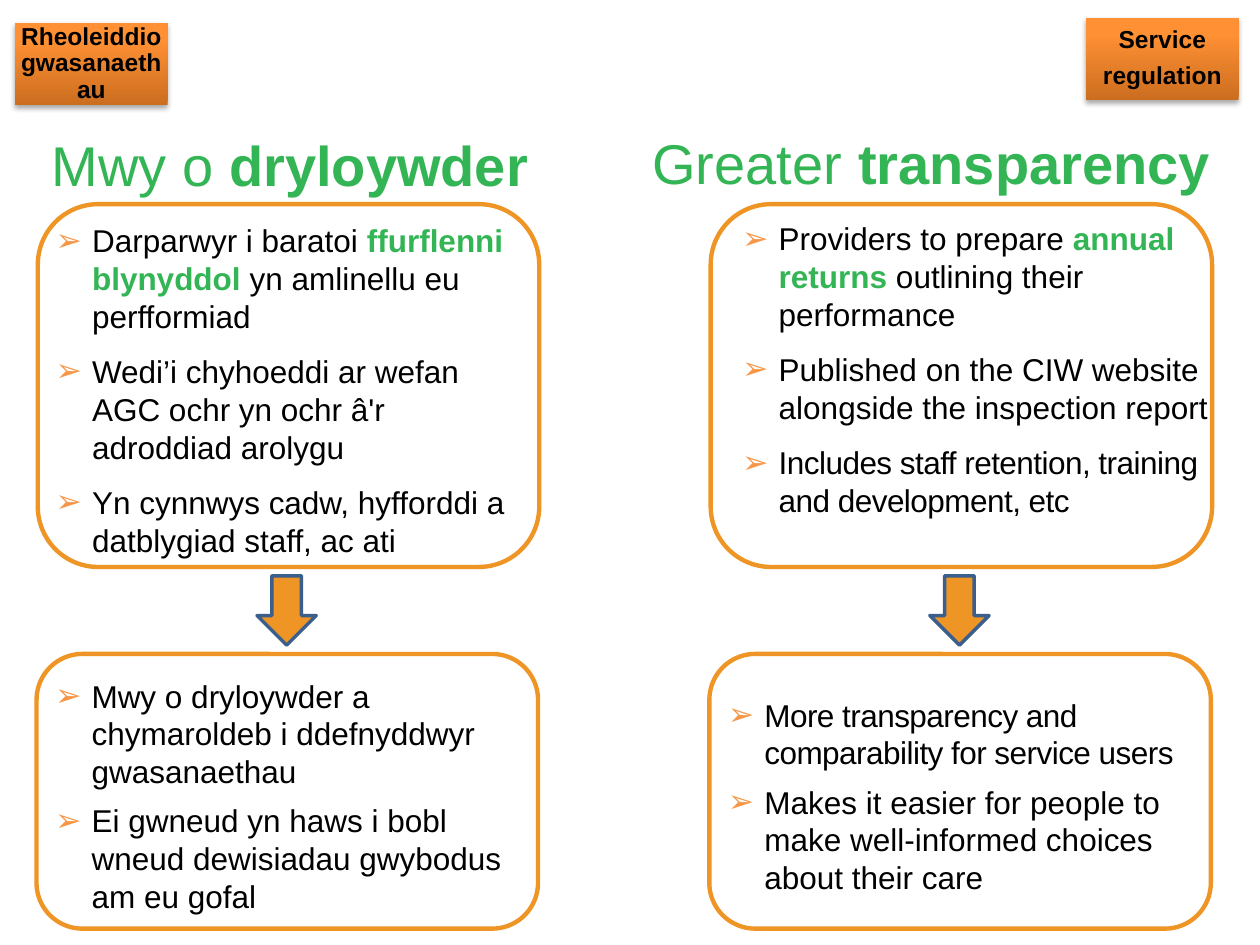
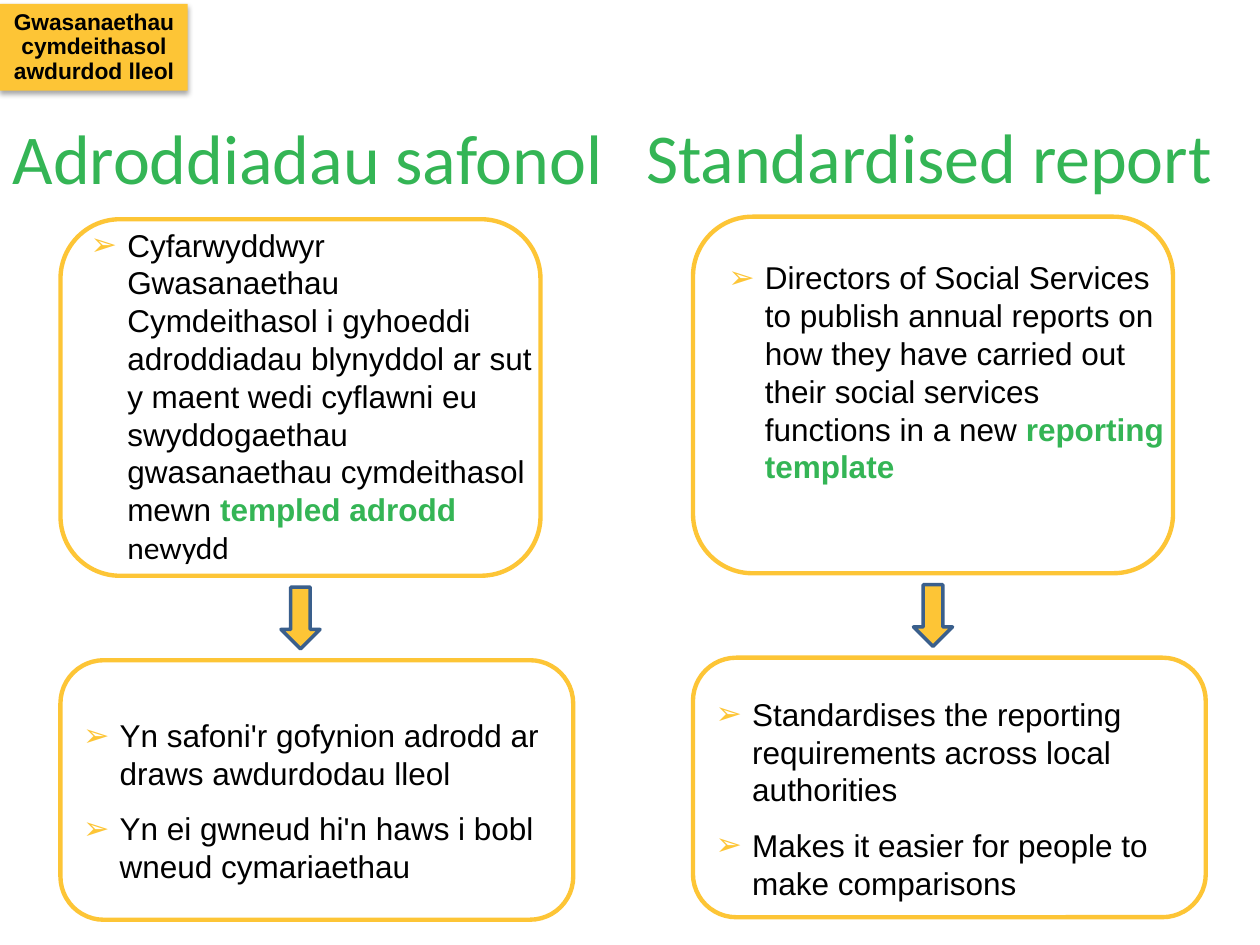
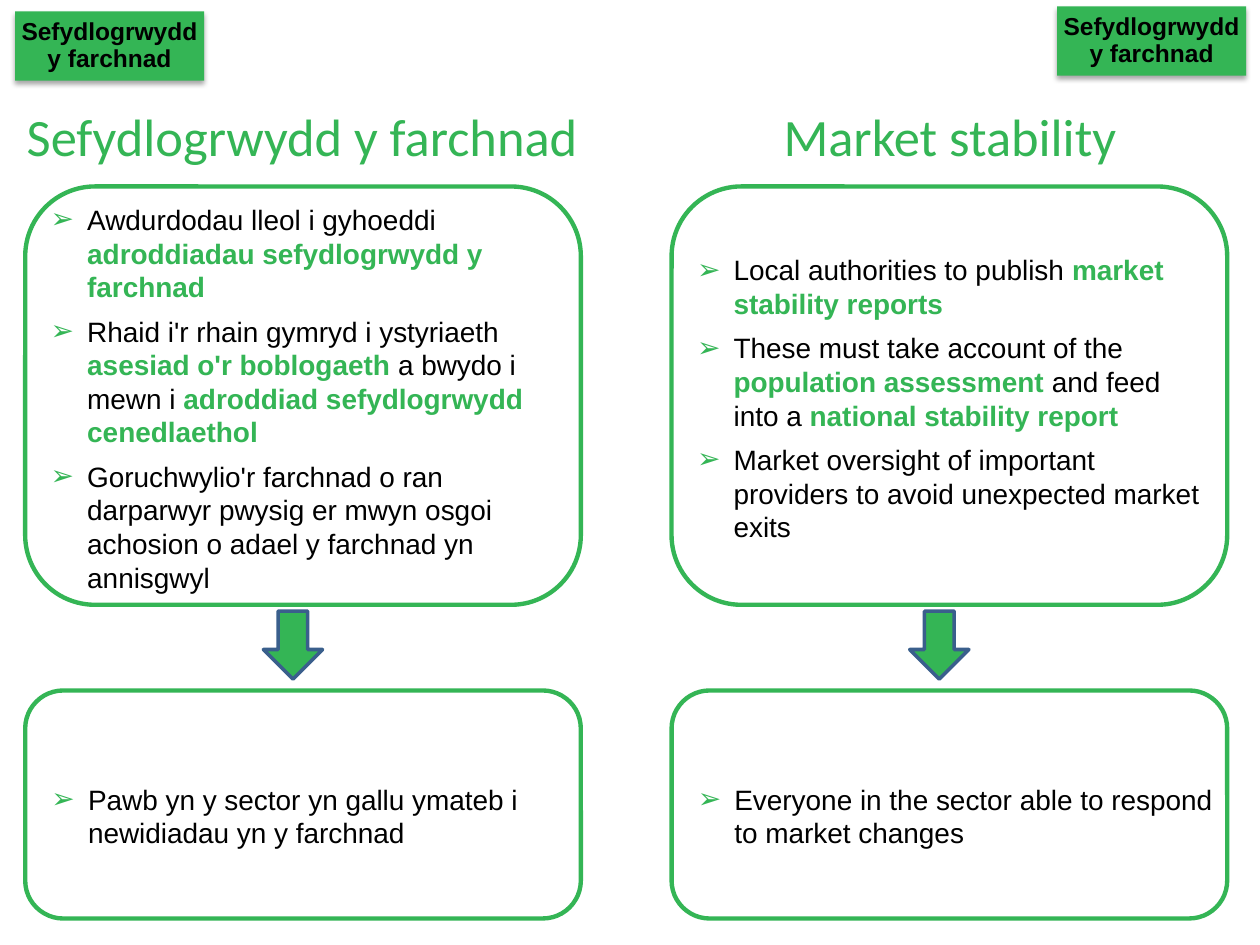
import pptx
import pptx.util
import pptx.dml.color
import pptx.enum.shapes
import pptx.enum.text
import pptx.oxml
import pptx.oxml.ns

Inches = pptx.util.Inches
Pt = pptx.util.Pt
SHAPE = pptx.enum.shapes.MSO_SHAPE
ALIGN = pptx.enum.text.PP_ALIGN
ANCHOR = pptx.enum.text.MSO_ANCHOR

COLOURS = {
    "black": "000000", "green": "34B555", "orange": "EF9526", "bullet orange": "F79646",
    "yellow": "FDC536", "arrow edge": "3A5F8C", "tag dark": "CC6E20", "tag light": "FF9034",
}
RUN_STYLES = {
    "plain": ({"name": "Arial", "bold": False}, "black"),
    "tight": ({"name": "Arial", "bold": False}, "black"),
    "calibri": ({"name": "Calibri", "bold": False}, "black"),
    "strong": ({"name": "Arial", "bold": True}, "black"),
    "key": ({"name": "Arial", "bold": True}, "green"),
    "heading": ({"name": "Arial", "bold": False}, "green"),
    "calibri heading": ({"name": "Calibri", "bold": False}, "green"),
}
BULLET_INDENT = Inches(0.29)
TAG_SHADOW = (
    '<a:outerShdw %s blurRad="39370" dist="22860" dir="5400000" rotWithShape="0">'
    '<a:srgbClr val="000000"><a:alpha val="35000"/></a:srgbClr></a:outerShdw>'
    % pptx.oxml.ns.nsdecls("a"))

# Each paragraph is a list of (text, run style); boxes and arrows are given for the
# left column and moved by "shift" for the right one.
SLIDES = [
    {
        "accent": "orange", "bullet": "bullet orange", "size": 18, "shift": (5.34, 0),
        "titles": [((0.31, 0.53, 6.14, 1.09), [("Mwy o ", "heading"), ("dryloywder", "key")]),
                   ((5.08, 0.51, 6.14, 1.09), [("Greater ", "heading"), ("transparency", "key")])],
        "title format": (32, ANCHOR.BOTTOM, ALIGN.LEFT),
        "tags": [((0.12, 0.18, 1.21, 0.65), ["Rheoleiddio gwasanaethau"]),
                 ((8.62, 0.14, 1.21, 0.65), ["Service", "regulation"])],
        "tag format": (14, 5, 0.02),
        "arrow": (2.04, 4.57, 0.47, 0.55),
        "boxes": [
            {"at": (0.3, 1.62, 3.98, 2.88), "insets": (0, 0.07, 0.04, 0), "gap": 10,
             "list places": (None, (5.79, 1.69, 3.95, 3.8)),
             "lists": (
                 [[("Darparwyr i baratoi ", "plain"), ("ffurflenni blynyddol ", "key"),
                   ("yn amlinellu eu perfformiad", "plain")],
                  [("Wedi’i chyhoeddi ar wefan AGC ochr yn ochr â'r adroddiad arolygu", "plain")],
                  [("Yn cynnwys cadw, hyfforddi a datblygiad staff, ac ati", "plain")]],
                 [[("Providers to prepare ", "plain"), ("annual returns ", "key"),
                   ("outlining their performance", "plain")],
                  [("Published on the CIW website alongside the inspection report", "plain")],
                  [("Includes staff retention, training and development, etc", "tight")]])},
            {"at": (0.29, 5.19, 3.98, 2.18), "insets": (0.04, 0.12, 0.1, 0.05), "gap": 6.5,
             "list places": (None, None),
             "lists": (
                 [[("Mwy o dryloywder a chymaroldeb i ddefnyddwyr gwasanaethau", "plain")],
                  [("Ei gwneud yn haws i bobl wneud dewisiadau gwybodus am eu gofal", "plain")]],
                 [[("More transparency and comparability for service users", "tight")],
                  [("Makes it easier for people to make well-informed choices about their care",
                    "plain")]])},
        ],
    },
    {
        "accent": "yellow", "bullet": "yellow", "size": 18, "shift": (5.02, -0.02),
        "titles": [((0, 0.62, 5.37, 1.25), [("Adroddiadau safonol", "calibri heading")]),
                   ((5.03, 0.61, 5.37, 1.25), [("Standardised report", "calibri heading")])],
        "title format": (40, ANCHOR.MIDDLE, ALIGN.LEFT),
        "tags": [((0, 0.03, 1.49, 0.69), ["Gwasanaethau", "cymdeithasol", "awdurdod lleol"])],
        "tag format": (13, 0, 0.05),
        "arrow": (2.23, 4.66, 0.31, 0.49),
        "boxes": [
            {"at": (0.48, 1.74, 3.81, 2.83), "insets": (0, 0, 0, 0), "gap": 10,
             "list places": ((0.62, 1.74, 3.73, 2.83), (5.68, 2, 3.73, 1.92)),
             "lists": (
                 [[("Cyfarwyddwyr Gwasanaethau Cymdeithasol i gyhoeddi adroddiadau blynyddol ar "
                    "sut y maent wedi cyflawni eu swyddogaethau gwasanaethau cymdeithasol mewn ",
                    "plain"), ("templed adrodd", "key"), (" newydd", "calibri")]],
                 [[("Directors of Social Services to publish annual reports on how they have "
                    "carried out their social services functions in a new ", "plain"),
                   ("reporting template", "key")]])},
            {"at": (0.48, 5.24, 4.07, 2.06), "insets": (0.08, 0.17, 0.08, 0), "gap": 10,
             "list places": (None, None),
             "lists": (
                 [[("Yn safoni'r gofynion adrodd ar draws awdurdodau lleol", "plain")],
                  [("Yn ei gwneud hi'n haws i bobl wneud cymariaethau", "plain")]],
                 [[("Standardises the reporting requirements across local authorities", "plain")],
                  [("Makes it easier for people to make comparisons", "plain")]])},
        ],
    },
    {
        "accent": "green", "bullet": "green", "size": 16, "shift": (5.13, 0),
        "titles": [((-0.83, 0.53, 6.46, 1.09), [("Sefydlogrwydd y farchnad", "calibri heading")]),
                   ((4.31, 0.53, 6.46, 1.09), [("Market stability", "calibri heading")])],
        "title format": (30, ANCHOR.MIDDLE, ALIGN.CENTER),
        "tags": [((0.12, 0.09, 1.5, 0.55), ["Sefydlogrwydd y farchnad"]),
                 ((8.39, 0.05, 1.5, 0.55), ["Sefydlogrwydd y farchnad"])],
        "tag format": (14, 0, 0.02),
        "arrow": (2.09, 4.85, 0.47, 0.54),
        "boxes": [
            {"at": (0.2, 1.48, 4.41, 3.32), "insets": (0.04, 0.12, 0, 0.08), "gap": 6.2,
             "list places": (None, None),
             "lists": (
                 [[("Awdurdodau lleol i gyhoeddi ", "plain"),
                   ("adroddiadau sefydlogrwydd y farchnad", "key")],
                  [("Rhaid i'r rhain gymryd i ystyriaeth ", "plain"),
                   ("asesiad o'r boblogaeth ", "key"), ("a bwydo i mewn i ", "plain"),
                   ("adroddiad sefydlogrwydd cenedlaethol", "key")],
                  [("Goruchwylio'r farchnad o ran darparwyr pwysig er mwyn osgoi achosion o "
                    "adael y farchnad yn annisgwyl", "plain")]],
                 [[("Local authorities to publish ", "plain"), ("market stability reports", "key")],
                  [("These must take account of the ", "plain"), ("population assessment ", "key"),
                   ("and feed into a ", "plain"), ("national stability report", "key")],
                  [("Market oversight of important providers to avoid unexpected market exits",
                    "plain")]])},
            {"at": (0.2, 5.48, 4.41, 1.81), "insets": (0.12, 0.18, 0, 0), "gap": 6.2,
             "list places": (None, None),
             "lists": (
                 [[("Pawb yn y sector yn gallu ymateb i newidiadau yn y farchnad", "plain")]],
                 [[("Everyone in the sector able to respond to market changes", "plain")]])},
        ],
    },
]


def write_text(frame, paragraphs, size, insets, anchor, align, gap=0, line=1.0, bullet=None):
    """Fill a text frame; gap is the space between paragraphs in points."""
    left, top, right, bottom = map(Inches, insets)
    settings = {"word_wrap": True, "auto_size": pptx.enum.text.MSO_AUTO_SIZE.NONE,
                "vertical_anchor": anchor, "margin_left": left, "margin_top": top,
                "margin_right": right, "margin_bottom": bottom}
    for name, value in settings.items():
        setattr(frame, name, value)
    for index, runs in enumerate(paragraphs):
        para = frame.add_paragraph() if index else frame.paragraphs[0]
        settings = {"alignment": align, "line_spacing": line, "space_after": Pt(0),
                    "space_before": Pt(gap if index else 0)}
        for name, value in settings.items():
            setattr(para, name, value)
        if bullet:
            properties = para._p.get_or_add_pPr()
            properties.set("marL", str(BULLET_INDENT))
            properties.set("indent", str(-BULLET_INDENT))
            for mark in ('<a:buClr %s><a:srgbClr val="' + COLOURS[bullet] + '"/></a:buClr>',
                         '<a:buFont %s typeface="Arial"/>', '<a:buChar %s char="➢"/>'):
                properties.append(pptx.oxml.parse_xml(mark % pptx.oxml.ns.nsdecls("a")))
        for text, style in runs:
            span = para.add_run()
            span.text = text
            font_format, colour = RUN_STYLES[style]
            for name, value in font_format.items():
                setattr(span.font, name, value)
            span.font.size = Pt(size)
            span.font.color.rgb = pptx.dml.color.RGBColor.from_string(COLOURS[colour])
            if style == "tight":
                span._r.get_or_add_rPr().set("spc", "-30")


def add_plain_shape(slide, kind, at, fill=None, edge=None, edge_width=0):
    shape = slide.shapes.add_shape(kind, *map(Inches, at))
    shape.shadow.inherit = False
    for part, colour in ((shape.fill, fill), (shape.line.fill, edge)):
        if colour:
            part.solid()
            part.fore_color.rgb = pptx.dml.color.RGBColor.from_string(COLOURS[colour])
        else:
            part.background()
    if edge:
        shape.line.width = Pt(edge_width)
    return shape


deck = pptx.Presentation()
deck.slide_width, deck.slide_height = Inches(10), Inches(7.5)
two_content = deck.slide_layouts[3]

for page in SLIDES:
    slide = deck.slides.add_slide(two_content)
    title, *bodies = slide.placeholders
    accent = page["accent"]
    shift_x, shift_y = page["shift"]

    for box in page["boxes"]:
        left, top, width, height = box["at"]
        for column in range(2):
            at = (left + column * shift_x, top + column * shift_y, width, height)
            holder = add_plain_shape(slide, SHAPE.ROUNDED_RECTANGLE, at, None, accent, 2.5)
            insets, anchor = box["insets"], ANCHOR.MIDDLE
            place = box["list places"][column]
            if place:
                holder = bodies.pop(0)
                holder.left, holder.top, holder.width, holder.height = map(Inches, place)
                insets, anchor = (0.1, 0.05, 0.1, 0.05), ANCHOR.TOP
            write_text(holder.text_frame, box["lists"][column], page["size"], insets, anchor,
                       ALIGN.LEFT, box["gap"], bullet=page["bullet"])

    for body in bodies:
        body.element.getparent().remove(body.element)

    left, top, width, height = page["arrow"]
    for column in range(2):
        at = (left + column * shift_x, top + column * shift_y, width, height)
        add_plain_shape(slide, SHAPE.DOWN_ARROW, at, accent, "arrow edge", 2)

    title_size, title_anchor, title_align = page["title format"]
    for column, (at, runs) in enumerate(page["titles"]):
        place = list(map(Inches, at))
        heading = slide.shapes.add_textbox(*place) if column else title
        heading.left, heading.top, heading.width, heading.height = place
        write_text(heading.text_frame, [runs], title_size, (0.1, 0.05, 0.1, 0.05),
                   title_anchor, title_align)

    tag_size, tag_gap, tag_inset = page["tag format"]
    for at, lines in page["tags"]:
        tag = add_plain_shape(slide, SHAPE.RECTANGLE, at, accent)
        if accent == "orange":
            tag.fill.gradient()
            tag.fill.gradient_angle = 90
            stops = ((0, "tag dark"), (0.8, "tag light"))
            for stop, (position, colour) in zip(tag.fill.gradient_stops, stops):
                stop.position = position
                stop.color.rgb = pptx.dml.color.RGBColor.from_string(COLOURS[colour])
        effects = tag.element.spPr.find(pptx.oxml.ns.qn("a:effectLst"))
        effects.append(pptx.oxml.parse_xml(TAG_SHADOW))
        write_text(tag.text_frame, [[(line, "strong")] for line in lines], tag_size,
                   [tag_inset] * 4, ANCHOR.MIDDLE, ALIGN.CENTER, tag_gap, 0.9)

deck.save("out.pptx")
